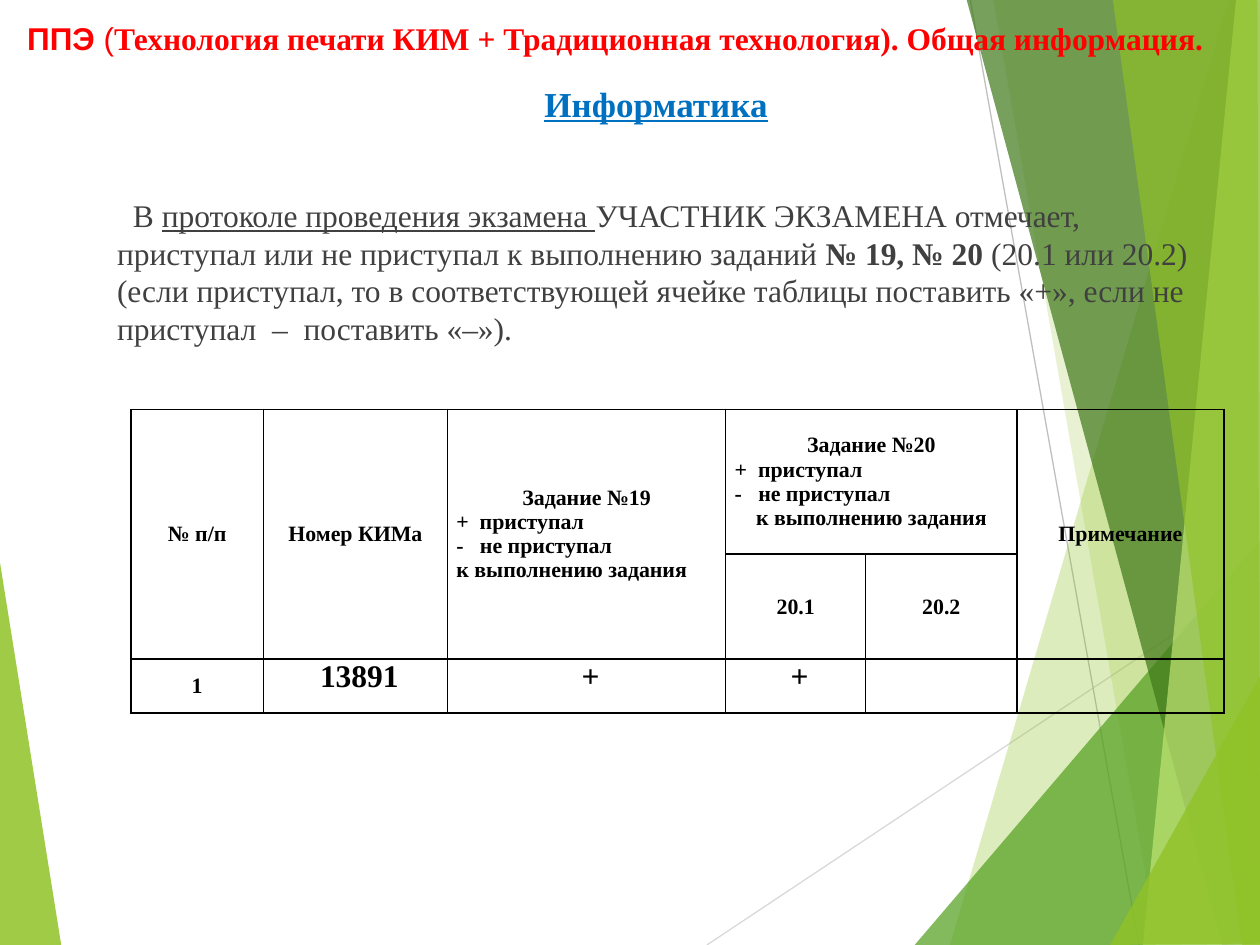
import pptx
import pptx.util
import pptx.dml.color
import pptx.enum.shapes
import pptx.enum.text
import pptx.oxml
import pptx.oxml.ns
from lxml import etree

Cm, Pt = pptx.util.Cm, pptx.util.Pt
PP_ALIGN = pptx.enum.text.PP_ALIGN
ANCHOR = pptx.enum.text.MSO_ANCHOR
qn = pptx.oxml.ns.qn
SERIF, SANS = "Times New Roman", "Arial"

COLORS = {
    "lime": "90C226", "green": "54A021", "dark": "3F7819", "pale": "C0E474",
    "line": "D9D9D9", "line2": "BFBFBF", "red": "FF0000", "blue": "0070C0",
    "text": "404040", "black": "000000",
}

# colour, opacity in percent, corner points in cm
LEFT_FACET = ("lime", 85, [(-0.03, 11.15), (1.24, 19.08), (-0.03, 19.05)])
RIGHT_FACETS = [
    ("lime", 30, [(24.77, 0), (19.15, 19.05), (25.45, 19.08), (25.43, 0.03)]),
    ("lime", 20, [(20.02, -0.03), (23.34, 19.05), (25.43, 19.05), (25.43, -0.03)]),
    ("green", 72, [(18.44, 19.05), (25.4, 10.9), (25.43, 19.05)]),
    ("dark", 70, [(19.48, -0.03), (24.64, 19.05), (25.43, 19.02), (25.43, -0.03)]),
    ("pale", 70, [(24.92, -0.03), (23.04, 19.05), (25.43, 19.05), (25.4, -0.03)]),
    ("lime", 65, [(22.43, -0.03), (25.04, 19.05), (25.4, 19.05), (25.35, -0.03)]),
    ("lime", 80, [(22.38, 19.05), (25.43, 13.59), (25.43, 19.02)]),
]
RAYS = [("line", (14.25, 19.05, 25.43, 11.61)), ("line2", (19.56, 0, 22.96, 19.05))]

# text, bold, font
TITLE = [
    ("ППЭ ", True, SANS),
    ("(", False, SANS),
    ("Технология печати КИМ + Традиционная технология). Общая информация.", True, SERIF),
]
SUBJECT = "Информатика"
# text, bold, underline
INSTRUCTION = [
    ("В ", False, False),
    ("протоколе проведения экзамена ", False, True),
    ("УЧАСТНИК ЭКЗАМЕНА отмечает, приступал или не приступал к выполнению заданий ", False, False),
    ("№ 19, № 20 ", True, False),
    ("(20.1 или 20.2) (если приступал, то в соответствующей ячейке таблицы поставить "
     "«+», если не приступал  –  поставить «–»).", False, False),
]

COLUMNS = [2.67, 3.71, 5.61, 2.82, 3.05, 4.17]
ROWS = [2.92, 2.01, 1.09]
MERGES = [(0, 0, 1, 0), (0, 1, 1, 1), (0, 2, 1, 2), (0, 3, 0, 4), (0, 5, 1, 5)]
MARKS = ["+  приступал", "-   не приступал"]
TASK = "к выполнению задания"
CENTER, LEFT = PP_ALIGN.CENTER, PP_ALIGN.LEFT
# (row, column): lines with their alignment
HEADERS = {
    (0, 0): [("№ п/п", CENTER)],
    (0, 1): [("Номер КИМа", CENTER)],
    (0, 2): [("Задание №19", CENTER), *[(m, LEFT) for m in MARKS], (TASK, LEFT)],
    (0, 3): [("Задание №20", CENTER), *[(m, LEFT) for m in MARKS], (TASK, CENTER)],
    (0, 5): [("Примечание", CENTER)],
    (1, 3): [("20.1", CENTER)],
    (1, 4): [("20.2", CENTER)],
    (2, 0): [("1", CENTER)],
}
ANSWERS = {(2, 1): "13891", (2, 2): "+", (2, 3): "+"}


def rgb(name):
    return pptx.dml.color.RGBColor.from_string(COLORS[name])


def style(font, size, color, bold=None, name=SERIF):
    font.size, font.bold, font.name = Pt(size), bold, name
    font.color.rgb = rgb(color)


def add_facet(slide, color, opacity, points):
    start, *rest = [(Cm(x), Cm(y)) for x, y in points]
    builder = slide.shapes.build_freeform(*start)
    builder.add_line_segments(rest, close=True)
    s = builder.convert_to_shape()
    s.shadow.inherit = False
    s.fill.solid()
    s.fill.fore_color.rgb = rgb(color)
    s.line.fill.background()
    clr = s.fill._xPr.find(".//" + qn("a:srgbClr"))
    etree.SubElement(clr, qn("a:alpha"), val=str(opacity * 1000))


def add_ray(slide, color, ends):
    s = slide.shapes.add_connector(
        pptx.enum.shapes.MSO_CONNECTOR.STRAIGHT, *[Cm(v) for v in ends])
    s.line.color.rgb = rgb(color)
    s.line.width = Pt(0.75)
    etree.SubElement(s._element.spPr, qn("a:effectLst"))


def add_text_frame(slide, *box):
    tf = slide.shapes.add_textbox(*[Cm(v) for v in box]).text_frame
    tf.word_wrap = True
    return tf


def add_title(slide):
    p = add_text_frame(slide, 0.3, 0.25, 24.77, 1.02).paragraphs[0]
    for text, bold, font in TITLE:
        r = p.add_run()
        r.text = text
        style(r.font, 18, "red", bold, font)


def add_body(slide):
    tf = add_text_frame(slide, 2.11, 1.7, 22.23, 17.78)
    p = tf.paragraphs[0]
    p.text = SUBJECT
    p.alignment = CENTER
    p.line_spacing = 0.8
    p.space_before = Pt(10)
    style(p.font, 20, "blue", True)
    p.font.underline = True

    p = tf.add_paragraph()
    p.space_before = Pt(41)
    p._p.get_or_add_pPr().set("indent", str(Cm(0.32)))
    style(p.font, 18, "text")
    for text, bold, underline in INSTRUCTION:
        r = p.add_run()
        r.text = text
        r.font.bold, r.font.underline = bold, underline


def add_borders(cell):
    tcPr = cell._tc.get_or_add_tcPr()
    for i, side in enumerate(("lnL", "lnR", "lnT", "lnB")):
        ln = etree.Element(qn("a:" + side), w=str(Pt(1)))
        fill = etree.SubElement(ln, qn("a:solidFill"))
        etree.SubElement(fill, qn("a:srgbClr"), val=COLORS["black"])
        tcPr.insert(i, ln)


def fill_cell(cell, lines, size):
    for i, (text, align) in enumerate(lines):
        tf = cell.text_frame
        p = tf.add_paragraph() if i else tf.paragraphs[0]
        p.text = text
        p.alignment = align
        style(p.font, size, "black", True)


def add_protocol(slide):
    table = slide.shapes.add_table(
        len(ROWS), len(COLUMNS), Cm(2.64), Cm(8.25), Cm(sum(COLUMNS)), Cm(sum(ROWS))).table
    table.first_row = table.horz_banding = False
    for col, width in zip(table.columns, COLUMNS):
        col.width = Cm(width)
    for row, height in zip(table.rows, ROWS):
        row.height = Cm(height)
    for top, left, bottom, right in MERGES:
        table.cell(top, left).merge(table.cell(bottom, right))
    for cell in table.iter_cells():
        cell.fill.background()
        add_borders(cell)
        cell.margin_left = cell.margin_right = Cm(0.18)
        cell.margin_top = cell.margin_bottom = 0
    for place, lines in HEADERS.items():
        table.cell(*place).vertical_anchor = ANCHOR.MIDDLE
        fill_cell(table.cell(*place), lines, 12.5)
    for place, text in ANSWERS.items():
        table.cell(*place).margin_left = Cm(0.34)
        fill_cell(table.cell(*place), [(text, CENTER)], 18)


def main():
    prs = pptx.Presentation()
    prs.slide_width, prs.slide_height = Cm(25.4), Cm(19.05)
    slide = prs.slides.add_slide(prs.slide_layouts[6])
    add_facet(slide, *LEFT_FACET)
    for ray in RAYS:
        add_ray(slide, *ray)
    for facet in RIGHT_FACETS:
        add_facet(slide, *facet)
    add_body(slide)
    add_protocol(slide)
    add_title(slide)
    prs.save("out.pptx")


if __name__ == "__main__":
    main()
